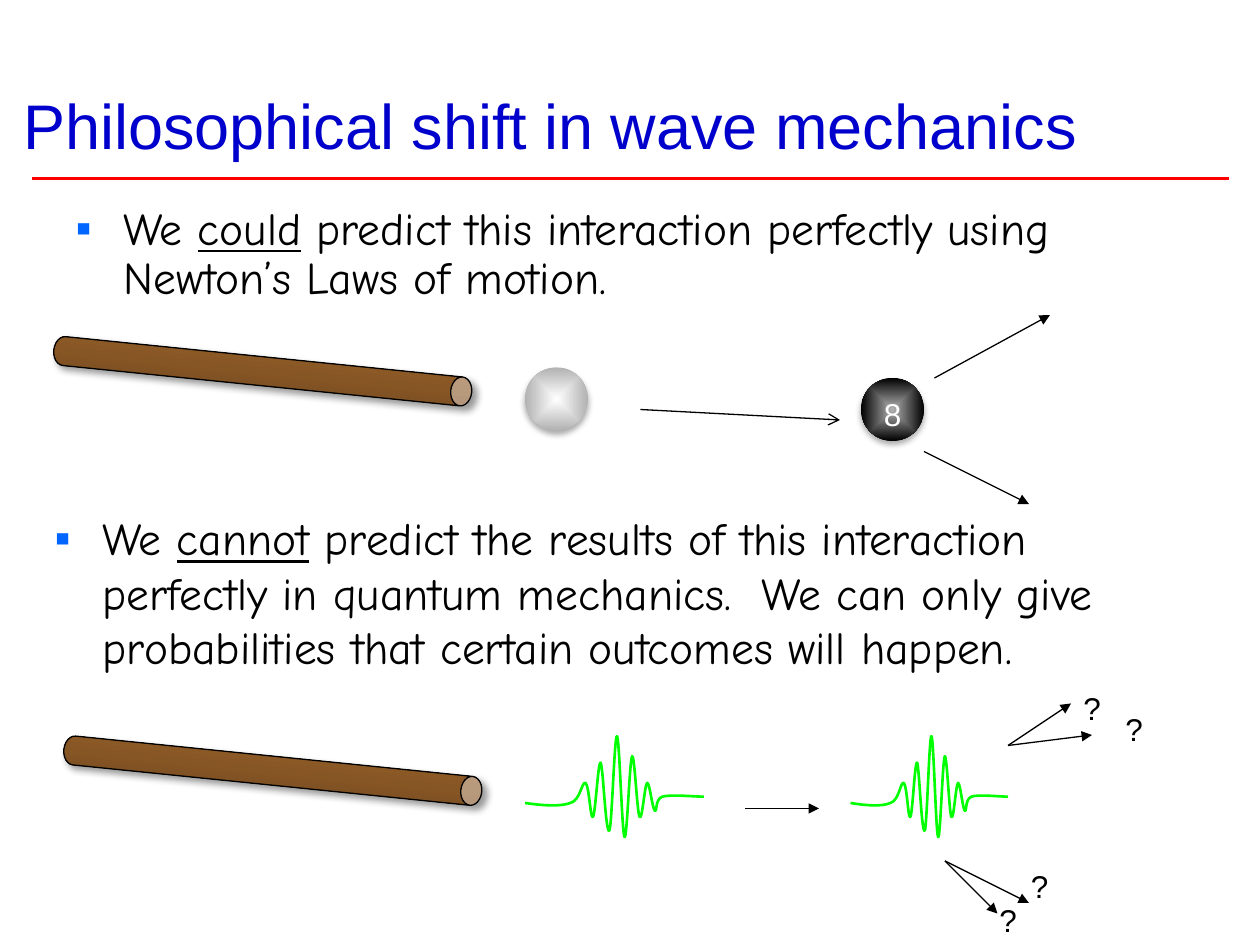
from dataclasses import dataclass

from pptx import Presentation
from pptx.dml.color import RGBColor
from pptx.enum.shapes import MSO_CONNECTOR, MSO_SHAPE
from pptx.enum.text import MSO_ANCHOR, MSO_AUTO_SIZE, PP_ALIGN
from pptx.oxml import parse_xml
from pptx.oxml.ns import nsdecls, qn
from pptx.util import Inches, Pt

BLACK, GREEN, RED, TITLE_BLUE = "000000", "00FF00", "FF0000", "0000CC"
CENTRE_PATH = '<a:path path="shape"><a:fillToRect l="50000" t="50000" r="50000" b="50000"/></a:path>'
ACROSS = '<a:lin ang="10800000" scaled="0"/>'
WOOD = ((0, "5F3C1A"), (50, "875625"), (100, "A1662B"))

# Wave packet 1.42 wide: start point, then (control, control, end) triples
WAVE_WIDTH = 1.42
WAVE_START = (0, 0.54)
WAVE = [
    ((0.14, 0.56), (0.28, 0.57), (0.36, 0.54)),
    ((0.44, 0.52), (0.45, 0.37), (0.48, 0.38)),
    ((0.51, 0.40), (0.52, 0.68), (0.54, 0.65)),
    ((0.56, 0.62), (0.58, 0.21), (0.60, 0.22)),
    ((0.62, 0.24), (0.64, 0.79), (0.67, 0.76)),
    ((0.69, 0.72), (0.71, 0.00), (0.73, 0.01)),
    ((0.75, 0.02), (0.77, 0.78), (0.79, 0.81)),
    ((0.81, 0.84), (0.83, 0.20), (0.85, 0.17)),
    ((0.87, 0.15), (0.89, 0.62), (0.91, 0.65)),
    ((0.93, 0.69), (0.95, 0.39), (0.97, 0.38)),
    ((0.99, 0.38), (1.01, 0.58), (1.03, 0.60)),
    ((1.05, 0.62), (1.03, 0.51), (1.09, 0.49)),
    ((1.15, 0.47), (1.35, 0.49), (1.42, 0.49)),
]


@dataclass
class Arrow:
    x1: float
    y1: float
    x2: float
    y2: float
    head: str = "triangle"


@dataclass
class Shadow:
    alpha: float
    blur: float
    dist: float
    angle: float


@dataclass
class Bullet:
    left: float
    top: float
    height: float
    runs: tuple[str, str, str]  # the middle one is underlined
    spacing: float


CUE_SHADOW = Shadow(40, 4, 3, 45)
BALL_SHADOW = Shadow(32, 3.5, 2.2, 90)

ARROWS = [
    Arrow(5.08, 3.25, 6.67, 3.33, "arrow"),
    Arrow(7.42, 3, 8.33, 2.5),
    Arrow(7.33, 3.58, 8.17, 4),
    Arrow(5.92, 6.42, 6.5, 6.42),
    Arrow(8, 5.92, 8.5, 5.58),
    Arrow(8, 5.92, 8.67, 5.83),
    Arrow(7.5, 6.83, 8.17, 7.17),
    Arrow(7.5, 6.83, 7.92, 7.25),
]
BULLETS = [
    Bullet(0.5, 1.58, 1.42, ("We ", "could", " predict this interaction perfectly using "
                             "Newton’s Laws of motion."), 0.9),
    Bullet(0.33, 4, 1.46, ("We ", "cannot", " predict the results of this interaction perfectly "
                           "in quantum mechanics.  We can only give probabilities that certain "
                           "outcomes will happen."), 1.0),
]
QUESTION_MARKS = [(8.83, 5.58), (7.83, 7.1), (8.5, 5.42), (8.08, 6.83)]


def rgb(value: str) -> RGBColor:
    return RGBColor.from_string(value)


def snap(*values: float) -> list[Inches]:
    """Lengths in inches, those next to the 1/24 inch grid put exactly on it."""
    grid = [round(v * 24) / 24 for v in values]
    return [Inches(g if abs(g - v) <= 0.005 else v) for g, v in zip(grid, values)]


def place(sp, left: float, top: float, width: float, height: float) -> None:
    sp.left, sp.top, sp.width, sp.height = snap(left, top, width, height)


def add_run(p, text: str, *, size=18, font="Arial", color=BLACK, underline=None) -> None:
    r = p.add_run()
    r.text = text
    r.font.size, r.font.name, r.font.underline = Pt(size), font, underline
    r.font.color.rgb = rgb(color)


def add_label(s, text: str, left: float, top: float, width=0.5, **fmt) -> None:
    tf = s.shapes.add_textbox(*snap(left, top, width, 0.4)).text_frame
    tf.word_wrap = True
    tf.auto_size = MSO_AUTO_SIZE.SHAPE_TO_FIT_TEXT
    add_run(tf.paragraphs[0], text, **fmt)


def fill_title(sp, text: str) -> None:
    place(sp, 0.08, 0, 9.83, 1.33)
    tf = sp.text_frame
    tf.auto_size, tf.vertical_anchor = MSO_AUTO_SIZE.NONE, MSO_ANCHOR.BOTTOM
    p = tf.paragraphs[0]
    p.alignment = PP_ALIGN.LEFT
    add_run(p, text, size=36, color=TITLE_BLUE)


def fill_bullet(sp, b: Bullet) -> None:
    place(sp, b.left, b.top, 9.25, b.height)
    sp.text_frame.auto_size = MSO_AUTO_SIZE.NONE
    p = sp.text_frame.paragraphs[0]
    p.line_spacing = b.spacing
    pPr = p._p.get_or_add_pPr()
    indent, = snap(0.38)
    pPr.set("marL", str(indent))
    pPr.set("indent", str(-indent))
    for xml in ('<a:buClr %s><a:srgbClr val="0066FF"/></a:buClr>',
                '<a:buFont %s typeface="Arial"/>', '<a:buChar %s char="▪"/>'):
        pPr.append(parse_xml(xml % nsdecls("a")))
    for i, text in enumerate(b.runs):
        add_run(p, text, size=26, font="Comic Neue", underline=i == 1)


def set_gradient(sp, stops, direction: str) -> None:
    sp.fill.background()
    gs = "".join(f'<a:gs pos="{pos * 1000}"><a:srgbClr val="{c}"/></a:gs>' for pos, c in stops)
    grad = parse_xml(f'<a:gradFill {nsdecls("a")} rotWithShape="1">'
                     f'<a:gsLst>{gs}</a:gsLst>{direction}</a:gradFill>')
    spPr = sp._element.spPr
    spPr.replace(spPr.find(qn("a:noFill")), grad)


def set_shadow(sp, sh: Shadow) -> None:
    sp.shadow.inherit = False
    sp._element.spPr.find(qn("a:effectLst")).append(parse_xml(
        f'<a:outerShdw {nsdecls("a")} blurRad="{Pt(sh.blur)}" dist="{Pt(sh.dist)}" '
        f'dir="{sh.angle * 60000}" rotWithShape="0"><a:srgbClr val="{BLACK}">'
        f'<a:alpha val="{sh.alpha * 1000}"/></a:srgbClr></a:outerShdw>'))


def set_line(sp, color: str, width: float) -> None:
    sp.line.color.rgb = rgb(color)
    sp.line.width = Pt(width)


def add_line(s, a: Arrow, color=BLACK, width=0.75) -> None:
    cn = s.shapes.add_connector(MSO_CONNECTOR.STRAIGHT, *snap(a.x1, a.y1, a.x2, a.y2))
    set_line(cn, color, width)
    spPr = cn._element.spPr
    spPr.find(qn("a:ln")).append(parse_xml(f'<a:tailEnd {nsdecls("a")} type="{a.head}"/>'))
    spPr.append(parse_xml(f'<a:effectLst {nsdecls("a")}/>'))


def add_cue(s, left: float, top: float) -> None:
    sp = s.shapes.add_shape(MSO_SHAPE.CAN, *snap(left, top, 0.23, 3.33))
    sp.adjustments[0] = 0.726
    sp.rotation = 95.8
    set_gradient(sp, WOOD, ACROSS)
    set_line(sp, BLACK, 0.75)
    set_shadow(sp, CUE_SHADOW)


def add_ball(s, left: float, top: float, inner: str, outer: str) -> None:
    sp = s.shapes.add_shape(MSO_SHAPE.OVAL, *snap(left, top, 0.5, 0.5))
    set_gradient(sp, ((0, inner), (100, outer)), CENTRE_PATH)
    sp.line.fill.background()
    set_shadow(sp, BALL_SHADOW)


def add_wave(s, left: float, top: float, width: float) -> None:
    """Draw the wave packet, turning each three line points into one Bézier curve."""
    x0, y0 = snap(left, top)
    start, *points = [(x0 + Inches(x * width / WAVE_WIDTH), y0 + Inches(y))
                      for x, y in [WAVE_START, *(pt for curve in WAVE for pt in curve)]]
    fb = s.shapes.build_freeform(*start)
    fb.add_line_segments(points, close=False)
    sp = fb.convert_to_shape()
    outline = next(sp._element.iter(qn("a:path")))
    lines = outline.findall(qn("a:lnTo"))
    for i in range(0, len(lines), 3):
        curve = parse_xml(f'<a:cubicBezTo {nsdecls("a")}/>')
        for line in lines[i:i + 3]:
            curve.append(line[0])
            outline.remove(line)
        outline.append(curve)
    sp.fill.background()
    set_line(sp, GREEN, 1.5)
    sp.shadow.inherit = False


def main() -> None:
    prs = Presentation()
    prs.slide_width, prs.slide_height = Inches(10), Inches(7.5)
    s = prs.slides.add_slide(prs.slide_layouts.get_by_name("Two Content"))
    fill_title(s.shapes.title, "Philosophical shift in wave mechanics")
    for idx, b in enumerate(BULLETS, start=1):
        fill_bullet(s.placeholders[idx], b)
    add_line(s, Arrow(0.25, 1.42, 9.75, 1.42, "none"), RED, 1.5)
    add_cue(s, 1.97, 1.28)
    add_cue(s, 2.05, 4.45)
    add_ball(s, 4.17, 2.92, "FFFFFF", "B2B2B2")
    add_ball(s, 6.83, 3, "B2B2B2", BLACK)
    add_label(s, "8", 6.92, 3.08, 0.42, color="FFFFFF")
    add_wave(s, 4.17, 5.83, 1.42)
    add_wave(s, 6.75, 5.83, 1.25)
    for a in ARROWS:
        add_line(s, a)
    for left, top in QUESTION_MARKS:
        add_label(s, "?", left, top)
    prs.save("out.pptx")


if __name__ == "__main__":
    main()
